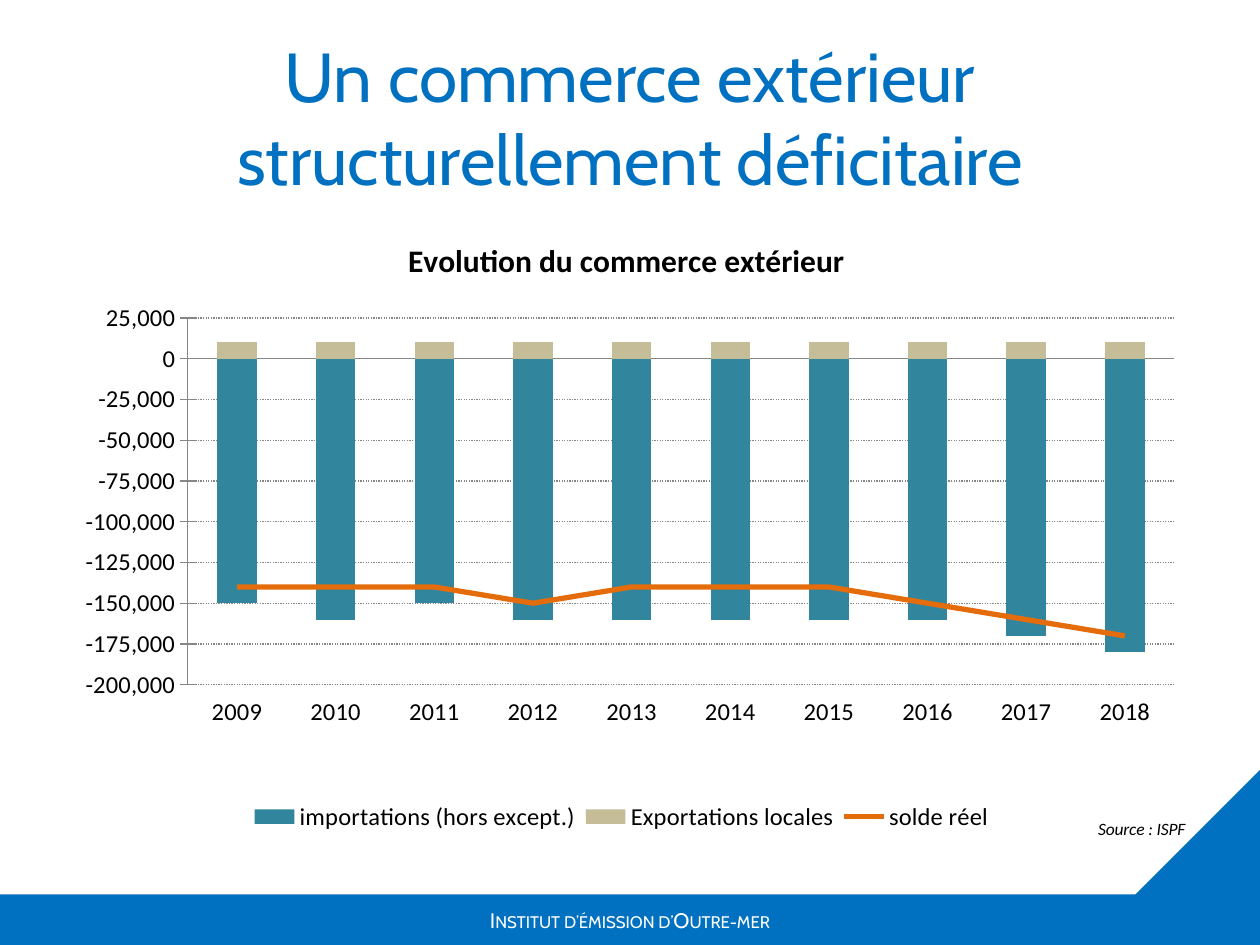
from lxml import etree
from pptx import Presentation
from pptx.chart.data import CategoryChartData
from pptx.dml.color import RGBColor
from pptx.enum.chart import (XL_CHART_TYPE, XL_LEGEND_POSITION, XL_MARKER_STYLE,
                             XL_TICK_LABEL_POSITION, XL_TICK_MARK)
from pptx.enum.dml import MSO_LINE
from pptx.enum.shapes import MSO_SHAPE
from pptx.enum.text import MSO_ANCHOR, PP_ALIGN
from pptx.oxml import parse_xml
from pptx.oxml.ns import qn
from pptx.util import Cm, Pt

RECTANGLE, TRIANGLE = MSO_SHAPE.RECTANGLE, MSO_SHAPE.RIGHT_TRIANGLE
CENTER, MIDDLE = PP_ALIGN.CENTER, MSO_ANCHOR.MIDDLE
BLUE, GREY, ORANGE = "0070C0", "868686", "E46C0A"
HEADING_FONT, CHART_FONT = "Cabin", "Calibri"

TITLE = "Un commerce extérieur structurellement déficitaire"
FOOTER = "Institut d’émission d’Outre-mer"
CHART_TITLE = "Evolution du commerce extérieur "
SOURCE = "Source : ISPF"
YEARS = [str(year) for year in range(2009, 2019)]
BARS = [  # name, colour, values in thousands
    ("importations (hors except.)", "31859C",
     [-150, -160, -150, -160, -160, -160, -160, -160, -170, -180]),
    ("Exportations locales", "C4BD97", [10] * len(YEARS)),
]
BALANCE = ("solde réel ", ORANGE,
           [-140, -140, -140, -150, -140, -140, -140, -150, -160, -170])


def color(value):
    return RGBColor.from_string(value)


def style(font, size, hex_color, name, bold=False, italic=False):
    font.size, font.name, font.bold, font.italic = Pt(size), name, bold, italic
    font.color.rgb = color(hex_color)


def add_blue_shape(slide, kind, left, top, width, height):
    shape = slide.shapes.add_shape(kind, Cm(left), Cm(top), Cm(width), Cm(height))
    shape.shadow.inherit = False
    shape.fill.solid()
    shape.fill.fore_color.rgb = color(BLUE)
    shape.line.fill.background()
    return shape


def set_layout(element, index, **fractions):
    """Place a chart part at fractions of the chart area."""
    for old in element.findall(qn("c:layout")):
        element.remove(old)
    layout = etree.Element(qn("c:layout"))
    manual = etree.SubElement(layout, qn("c:manualLayout"))
    if element.tag == qn("c:plotArea"):
        etree.SubElement(manual, qn("c:layoutTarget"), val="inner")
    for key in ("xMode", "yMode"):
        etree.SubElement(manual, qn("c:" + key), val="edge")
    for key, value in fractions.items():
        etree.SubElement(manual, qn("c:" + key), val=str(value))
    element.insert(index, layout)


def move_last_series_to_line(chart):
    """Turn the last column series into a line on the same axes."""
    bar_chart = chart._chartSpace.find(".//" + qn("c:barChart"))
    series = bar_chart.findall(qn("c:ser"))[-1]
    for flag in series.findall(qn("c:invertIfNegative")):
        series.remove(flag)
    line_chart = parse_xml(
        '<c:lineChart xmlns:c="http://schemas.openxmlformats.org/drawingml/2006/chart">'
        '<c:grouping val="standard"/><c:varyColors val="0"/><c:marker val="1"/>'
        '</c:lineChart>')
    line_chart.insert(2, series)
    for axis in bar_chart.findall(qn("c:axId")):
        etree.SubElement(line_chart, qn("c:axId"), val=axis.get("val"))
    bar_chart.addnext(line_chart)


def format_axes(chart):
    years, amounts = chart.category_axis, chart.value_axis
    years.tick_label_position = XL_TICK_LABEL_POSITION.LOW
    years.major_tick_mark = XL_TICK_MARK.NONE
    years.has_major_gridlines = False
    amounts.minimum_scale, amounts.maximum_scale = -200000, 25000
    amounts.major_unit = 25000
    amounts.major_tick_mark = XL_TICK_MARK.CROSS
    amounts.tick_labels.number_format = "#,##0"
    amounts.tick_labels.number_format_is_linked = False
    gridlines = amounts.major_gridlines.format.line
    for line in (years.format.line, amounts.format.line, gridlines):
        line.color.rgb = color(GREY)
        line.width = Pt(0.75)
    gridlines.dash_style = MSO_LINE.ROUND_DOT

    source = years.axis_title
    source.text_frame.text = SOURCE
    style(source.text_frame.paragraphs[0].runs[0].font, 10, "000000", CHART_FONT,
          italic=True)
    set_layout(source._element, 1, x=0.91, y=0.96)


def add_trade_chart(slide):
    data = CategoryChartData(number_format="#,##0")
    data.categories = YEARS
    for name, _, values in BARS + [BALANCE]:
        data.add_series(name, [value * 1000 for value in values])
    chart = slide.shapes.add_chart(XL_CHART_TYPE.COLUMN_STACKED, Cm(1.27), Cm(4.32),
                                   Cm(22.86), Cm(12.7), data).chart
    style(chart.font, 14, "000000", CHART_FONT)
    chart.has_title = True
    chart.chart_title.text_frame.text = CHART_TITLE
    style(chart.chart_title.text_frame.paragraphs[0].runs[0].font, 18, "000000",
          CHART_FONT, bold=True)
    chart.has_legend = True
    chart.legend.position = XL_LEGEND_POSITION.BOTTOM
    chart.legend.include_in_layout = False
    set_layout(chart.legend._element, 1, x=0.16, y=0.94, w=0.67, h=0.06)

    move_last_series_to_line(chart)
    columns, lines = chart.plots
    columns.gap_width, columns.overlap = 150, 100
    columns.vary_by_categories = False
    for series, (_, hex_color, _) in zip(columns.series, BARS):
        series.invert_if_negative = False
        series.format.fill.solid()
        series.format.fill.fore_color.rgb = color(hex_color)
    balance = lines.series[0]
    balance.smooth = False
    balance.marker.style = XL_MARKER_STYLE.NONE
    balance.format.line.color.rgb = color(BALANCE[1])
    balance.format.line.width = Pt(3)

    format_axes(chart)
    plot_area = chart._chartSpace.find(".//" + qn("c:plotArea"))
    set_layout(plot_area, 0, x=0.11, y=0.166, w=0.87, h=0.587)


def add_footer(slide):
    bar = add_blue_shape(slide, RECTANGLE, 0, 18.03, 25.4, 1.02)
    bar.text_frame.text = FOOTER
    bar.text_frame.vertical_anchor = MIDDLE
    paragraph = bar.text_frame.paragraphs[0]
    paragraph.alignment = CENTER
    run = paragraph.runs[0]
    style(run.font, 12, "FFFFFF", HEADING_FONT)
    run._r.get_or_add_rPr().set("cap", "small")
    corner = add_blue_shape(slide, TRIANGLE, 22.86, 15.52, 2.54, 2.54)
    corner.rotation = 270


def add_title(slide):
    title = slide.shapes.title
    title.left, title.top, title.width, title.height = Cm(1.27), Cm(0.76), Cm(22.86), Cm(3.18)
    title.text_frame.text = TITLE
    title.text_frame.vertical_anchor = MIDDLE
    paragraph = title.text_frame.paragraphs[0]
    paragraph.alignment = CENTER
    style(paragraph.runs[0].font, 39.6, BLUE, HEADING_FONT)


def main():
    presentation = Presentation()
    presentation.slide_width, presentation.slide_height = Cm(25.4), Cm(19.05)
    slide = presentation.slides.add_slide(presentation.slide_layouts[5])
    add_footer(slide)
    add_title(slide)
    add_trade_chart(slide)
    presentation.save("out.pptx")


if __name__ == "__main__":
    main()
